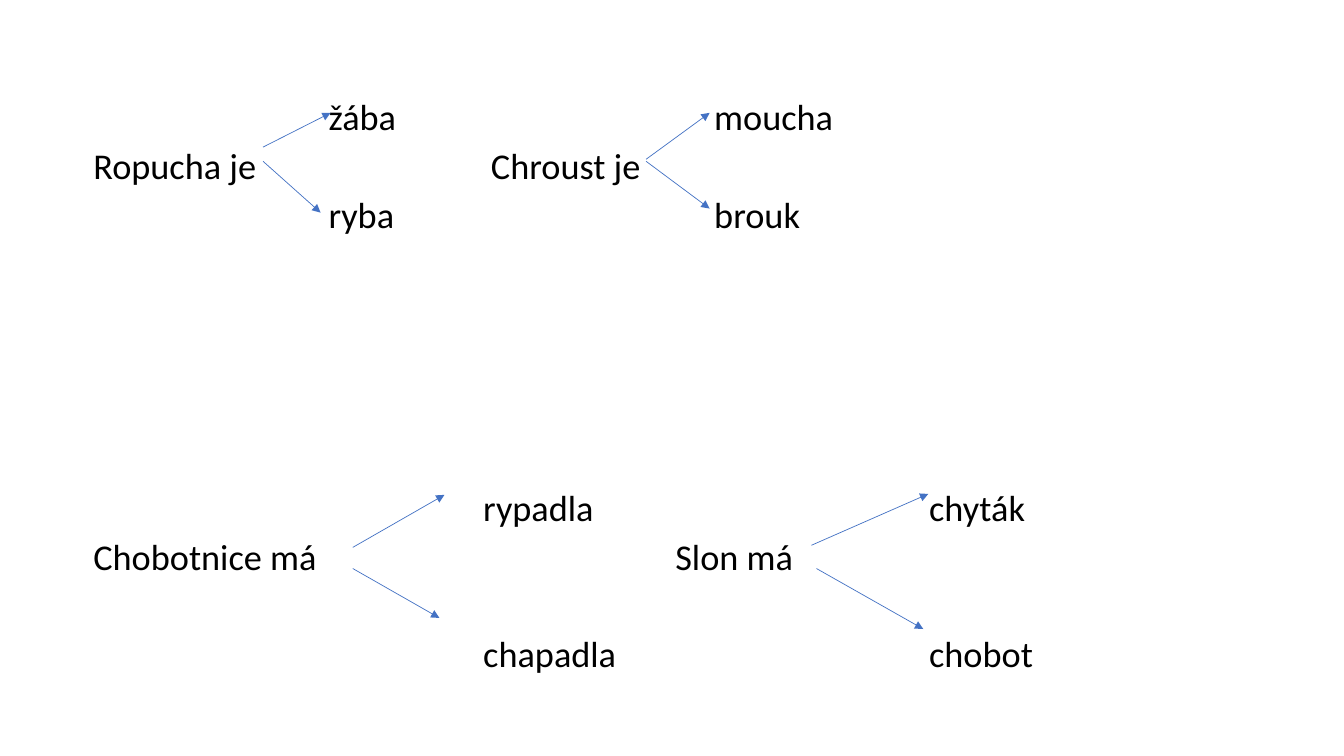
from pptx import Presentation
from pptx import util as u
from pptx.dml.color import RGBColor
from pptx.enum import shapes, text
from pptx.oxml.ns import qn
from lxml import etree

BLACK = RGBColor(0x00, 0x00, 0x00)
BLUE = RGBColor(0x44, 0x72, 0xC4)
ANIMAL_TABS = (168, 284, 443.5)
BODY_TABS = (278.5, 415.7, 597)
LINES = (
    ("\tžába\t\tmoucha", ANIMAL_TABS, 0, 1.0),
    ("Ropucha je\t\tChroust je", ANIMAL_TABS, 10, 0.8),
    ("\tryba\t\tbrouk", ANIMAL_TABS, 10, 0.8),
    ("\trypadla\t\tchyták", BODY_TABS, 184.5, 0.8),
    ("Chobotnice má\t\tSlon má", BODY_TABS, 10, 0.8),
    ("\tchapadla\t\tchobot", BODY_TABS, 44.5, 0.8),
)
ARROWS = (
    (187.9, 105.1, 236.2, 80.6),
    (187.9, 115.2, 229, 151.9),
    (461.5, 113.8, 506.9, 80.6),
    (461.5, 115.2, 506.9, 149),
    (252, 391, 317.5, 353.5),
    (252, 406.1, 313.9, 441.4),
    (579.6, 389.5, 663.1, 352.8),
    (583.2, 406.1, 659.5, 449.3),
)


def write_line(paragraph, content, *, tabs, before, spacing, size=25.9,
               font="Calibri", color=BLACK):
    """Write one line whose words are placed by tab stops."""
    paragraph.alignment = text.PP_ALIGN.LEFT
    paragraph.space_before = u.Pt(before)
    paragraph.line_spacing = spacing
    run = paragraph.add_run()
    run.text = content
    run.font.size = u.Pt(size)
    run.font.name = font
    run.font.color.rgb = color
    tab_list = etree.SubElement(paragraph._p.get_or_add_pPr(), qn("a:tabLst"))
    for position in tabs:
        etree.SubElement(tab_list, qn("a:tab"), pos=str(u.Pt(position)), algn="l")


def add_exercise(slide):
    """Add the text box that holds all lines of the exercise."""
    box = slide.shapes.add_textbox(u.Pt(59.6), u.Pt(63.9), u.Pt(828), u.Pt(420.6))
    frame = box.text_frame
    frame.word_wrap = True
    frame.auto_size = text.MSO_AUTO_SIZE.NONE
    frame.vertical_anchor = text.MSO_ANCHOR.TOP
    for index, (content, tabs, before, spacing) in enumerate(LINES):
        paragraph = frame.add_paragraph() if index else frame.paragraphs[0]
        write_line(paragraph, content, tabs=tabs, before=before, spacing=spacing)


def add_arrow(slide, *ends):
    """Draw a thin arrow from the first point to the second."""
    arrow = slide.shapes.add_connector(
        shapes.MSO_CONNECTOR.STRAIGHT, *(u.Pt(end) for end in ends))
    arrow.line.color.rgb = BLUE
    arrow.line.width = u.Pt(0.5)
    etree.SubElement(arrow.line._get_or_add_ln(), qn("a:tailEnd"), type="triangle")
    etree.SubElement(arrow._element.spPr, qn("a:effectLst"))


def main():
    """Build and save the slide."""
    presentation = Presentation()
    presentation.slide_width, presentation.slide_height = u.Pt(960), u.Pt(540)
    slide = presentation.slides.add_slide(presentation.slide_layouts[6])
    add_exercise(slide)
    for ends in ARROWS:
        add_arrow(slide, *ends)
    presentation.save("out.pptx")


if __name__ == "__main__":
    main()
